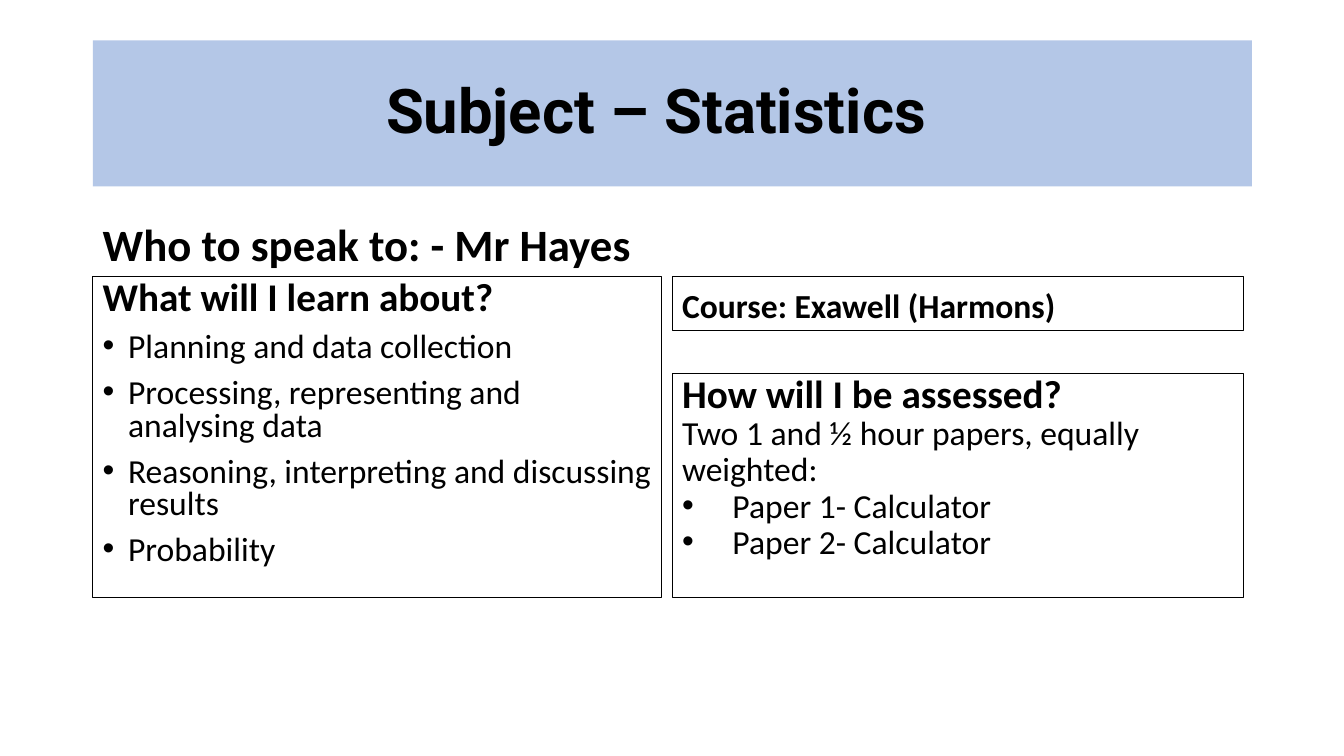
from lxml.etree import SubElement
from pptx import Presentation
from pptx.dml.color import RGBColor
from pptx.enum.shapes import MSO_SHAPE
from pptx.enum.text import MSO_ANCHOR, PP_ALIGN
from pptx.oxml.ns import qn
from pptx.util import Cm, Pt

BLACK = RGBColor(0x00, 0x00, 0x00)
BANNER_BLUE = RGBColor(0xB4, 0xC7, 0xE7)

LEFT = 2.34
CONTENT_TOP = 6.96
CONTENT_BOTTOM = 15.05
COLUMN_WIDTH = 14.33
RIGHT_LEFT = 16.94
RIGHT_WIDTH = 14.4
ASSESSMENT_TOP = 9.42


def add_panel(slide, box, anchor=MSO_ANCHOR.TOP, fill=None, outlined=False):
    lengths = [Cm(length) for length in box]
    if fill is None and not outlined:
        shape = slide.shapes.add_textbox(*lengths)
    else:
        shape = slide.shapes.add_shape(MSO_SHAPE.RECTANGLE, *lengths)
        shape.shadow.inherit = False
        if fill is None:
            shape.fill.background()
        else:
            shape.fill.solid()
            shape.fill.fore_color.rgb = fill
        if outlined:
            shape.line.color.rgb = BLACK
            shape.line.width = Pt(0.75)
        else:
            shape.line.fill.background()
    shape.text_frame.word_wrap = True
    shape.text_frame.vertical_anchor = anchor
    return shape.text_frame


def write_paragraph(text_frame, text, size, bold=False, font="Calibri",
                    align=PP_ALIGN.LEFT, spacing=0.9, before=0, indent=None):
    first = not text_frame.text
    paragraph = text_frame.paragraphs[0] if first else text_frame.add_paragraph()
    paragraph.text = text
    paragraph.alignment = align
    paragraph.line_spacing = spacing
    paragraph.space_before = Pt(0 if first else before)
    if indent is not None:
        properties = paragraph._p.get_or_add_pPr()
        properties.set("marL", str(Cm(indent)))
        properties.set("indent", str(-Cm(indent)))
        SubElement(properties, qn("a:buFont"), typeface="Arial")
        SubElement(properties, qn("a:buChar"), char="•")
    for run in paragraph.runs:
        run.font.name = font
        run.font.size = Pt(size)
        run.font.bold = bold
        run.font.color.rgb = BLACK


def add_title_banner(slide, box):
    text_frame = add_panel(slide, box, MSO_ANCHOR.MIDDLE, fill=BANNER_BLUE)
    text_frame.margin_right = Cm(1.05)
    write_paragraph(text_frame, "Subject – Statistics", 44, bold=True,
                    font="Roboto", align=PP_ALIGN.CENTER)


def add_label(slide, box, text, size, outlined=False):
    text_frame = add_panel(slide, box, MSO_ANCHOR.BOTTOM, outlined=outlined)
    write_paragraph(text_frame, text, size, bold=True)


def add_topics(slide, box):
    text_frame = add_panel(slide, box, outlined=True)
    write_paragraph(text_frame, "What will I learn about?", 28, bold=True, spacing=0.8)
    for topic in ("Planning and data collection",
                  "Processing, representing and analysing data",
                  "Reasoning, interpreting and discussing results",
                  "Probability"):
        write_paragraph(text_frame, topic, 24, spacing=0.8, before=10, indent=0.64)


def add_assessment(slide, box):
    text_frame = add_panel(slide, box, outlined=True)
    write_paragraph(text_frame, "How will I be assessed?", 28, bold=True, spacing=0.8)
    write_paragraph(text_frame, "Two 1 and ½ hour papers,\u00a0equally weighted:", 24)
    for paper in ("Paper 1- Calculator", "Paper 2- Calculator"):
        write_paragraph(text_frame, paper, 24, indent=1.27)


def main():
    presentation = Presentation()
    presentation.slide_width = Cm(33.87)
    presentation.slide_height = Cm(19.05)
    slide = presentation.slides.add_slide(presentation.slide_layouts[6])
    add_title_banner(slide, (LEFT, 1.02, 29.21, 3.68))
    add_label(slide, (LEFT, 4.67, COLUMN_WIDTH, 2.29), "Who to speak to: - Mr Hayes", 32)
    add_topics(slide, (LEFT, CONTENT_TOP, COLUMN_WIDTH, CONTENT_BOTTOM - CONTENT_TOP))
    add_label(slide, (RIGHT_LEFT, CONTENT_TOP, RIGHT_WIDTH, 1.37),
              "Course: Exawell (Harmons)", 24, outlined=True)
    add_assessment(slide, (RIGHT_LEFT, ASSESSMENT_TOP, RIGHT_WIDTH,
                           CONTENT_BOTTOM - ASSESSMENT_TOP))
    presentation.save("out.pptx")


if __name__ == "__main__":
    main()
